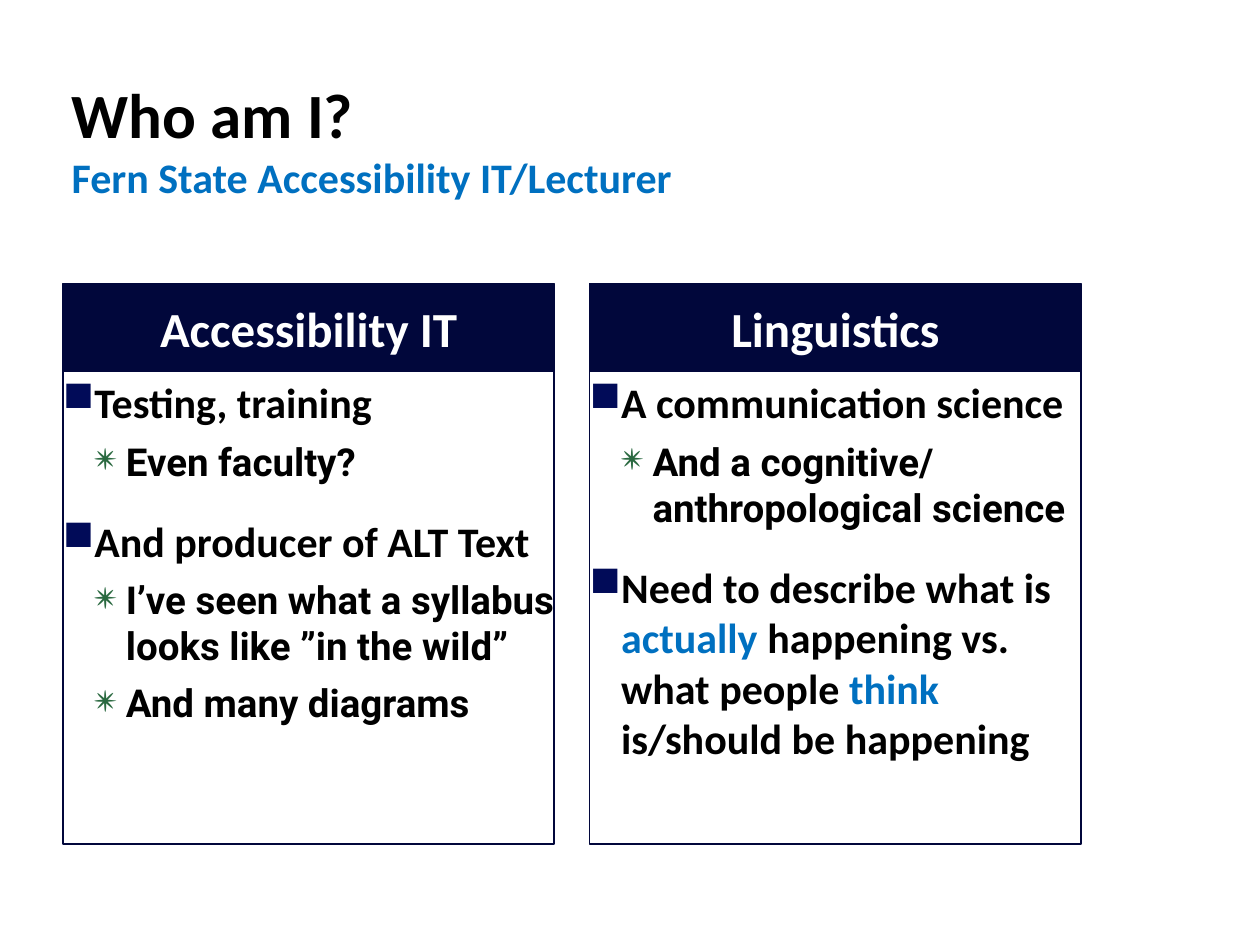
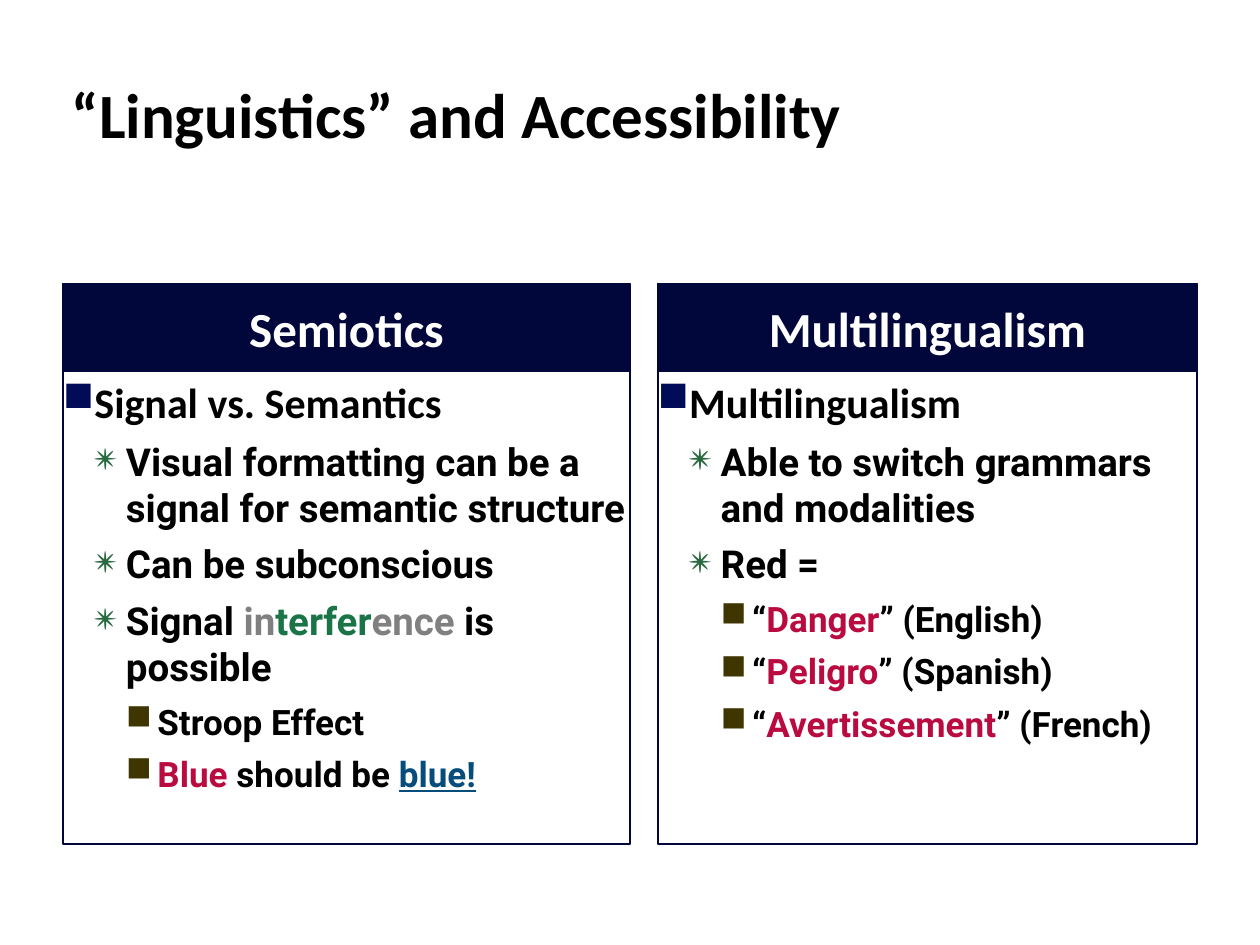
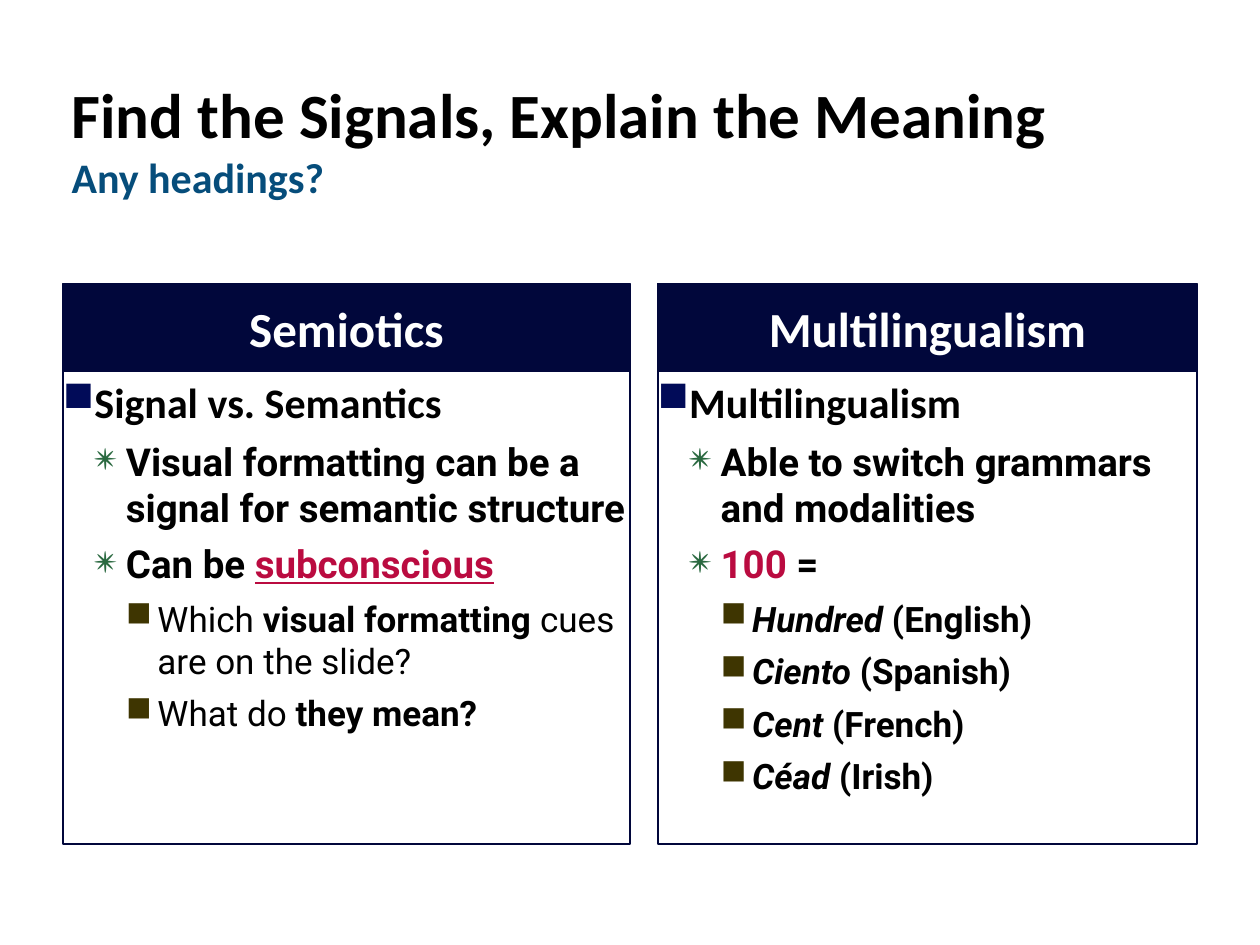
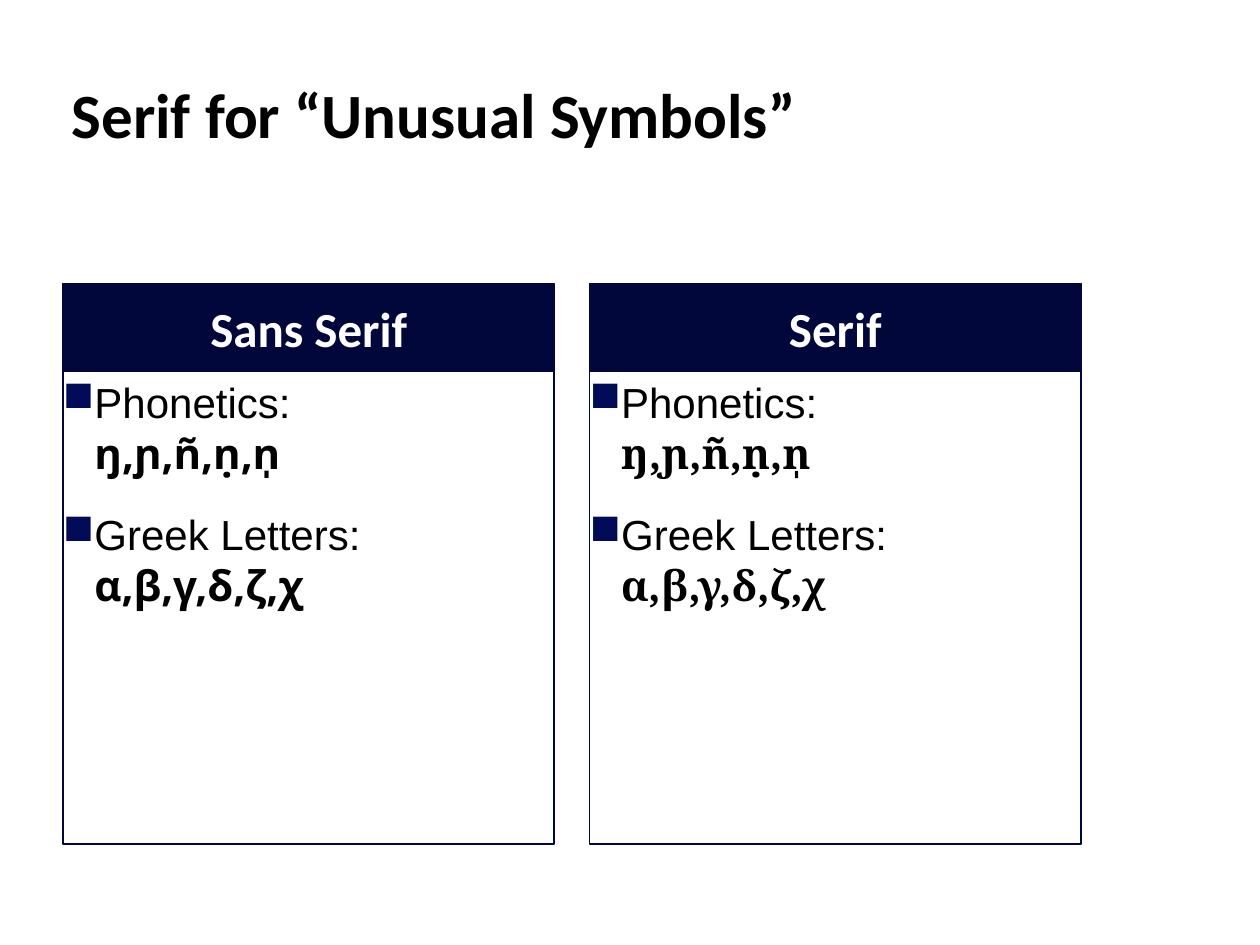
from dataclasses import dataclass
from typing import NamedTuple

from lxml import etree
from pptx import Presentation
from pptx import util as u
from pptx.dml.color import RGBColor
from pptx.enum import shapes, text
from pptx.oxml import ns

COLORS = {
    "black": "000000",
    "white": "FFFFFF",
    "navy": "01073B",
    "sky": "0070C0",
    "blue": "064D7B",
    "red": "BA0B40",
    "gray": "808080",
    "green": "1A7447",
    "bullet_navy": "010B58",
    "bullet_green": "2A6940",
    "bullet_olive": "3E3501",
}
HEADING_FONT = "Calibri"
HEADER_TOP, HEADER_HEIGHT = 2.25, 0.7
BODY_TOP, BODY_HEIGHT = 2.94, 3.76
INDENT = 0.25


class Level(NamedTuple):
    size: int
    font: str
    space_before: int
    bullet: str
    bullet_color: str


LEVELS = (
    Level(24, HEADING_FONT, 18, "■", "bullet_navy"),
    Level(22, "Roboto", 6, "✴", "bullet_green"),
    Level(20, "Roboto", 6, "■", "bullet_olive"),
)


class Span(NamedTuple):
    text: str
    style: dict = {}


class Item(NamedTuple):
    level: int
    spans: tuple


class Column(NamedTuple):
    left: float
    width: float
    header_line: float


EQUAL_COLUMNS = (Column(0.5, 3.9, 1), Column(4.68, 3.9, 0.75))
WIDE_COLUMNS = (Column(0.5, 4.5, 1), Column(5.22, 4.28, 0.75))


@dataclass
class Panel:
    header: str
    items: list


@dataclass
class Page:
    title: str
    panels: tuple
    columns: tuple
    subtitle: str = ""
    subtitle_color: str = "blue"


def item(level: int, *parts) -> Item:
    return Item(level, tuple(Span(part) if isinstance(part, str) else part for part in parts))


def tint(words: str, color: str, **style) -> Span:
    return Span(words, {"color": color, **style})


def translation(word: str, language: str) -> Item:
    return item(2, "“", tint(word, "red"), f"” ({language})")


def number_word(word: str, language: str) -> Item:
    return item(2, Span(word, {"italic": True}), f" ({language})")


def symbol_panel(header: str, font: str) -> Panel:
    samples = (("Phonetics: ", "ŋ,ɲ,ñ,ṇ,n̩"), ("Greek Letters: ", "α,β,γ,δ,ζ,χ"))
    return Panel(header, [
        item(0, Span(f"{label}\n", {"font": "Arial", "bold": False}), Span(symbols, {"font": font}))
        for label, symbols in samples
    ])


SIGNAL_ITEMS = [
    item(0, "Signal vs. Semantics"),
    item(1, "Visual formatting can be a signal for semantic structure"),
]
LANGUAGE_ITEMS = [
    item(0, "Multilingualism"),
    item(1, "Able to switch grammars and modalities"),
]

PAGES = [
    Page("Who am I?", (
        Panel("Accessibility IT", [
            item(0, "Testing, training"),
            item(1, "Even faculty?"),
            item(0, "And producer of ALT Text"),
            item(1, "I’ve seen what a syllabus looks like ”in the wild”"),
            item(1, "And many diagrams"),
        ]),
        Panel("Linguistics", [
            item(0, "A communication science"),
            item(1, "And a cognitive/\nanthropological science"),
            item(0, "Need to describe what is ", tint("actually", "sky"),
                 " happening vs. what people ", tint("think", "sky"),
                 " is/should be happening"),
        ]),
    ), EQUAL_COLUMNS, "Fern State Accessibility IT/Lecturer", "sky"),
    Page("“Linguistics” and Accessibility", (
        Panel("Semiotics", SIGNAL_ITEMS + [
            item(1, "Can be subconscious"),
            item(1, "Signal ", tint("in", "gray"), tint("terfer", "green"),
                 tint("ence", "gray"), " is possible"),
            item(2, "Stroop Effect"),
            item(2, tint("Blue", "red"), " should be ", tint("blue!", "blue", underline=True)),
        ]),
        Panel("Multilingualism", LANGUAGE_ITEMS + [
            item(1, "Red ="),
            translation("Danger", "English"),
            translation("Peligro", "Spanish"),
            translation("Avertissement", "French"),
        ]),
    ), WIDE_COLUMNS),
    Page("Find the Signals, Explain the Meaning", (
        Panel("Semiotics", SIGNAL_ITEMS + [
            item(1, "Can be ", tint("subconscious", "red", underline=True)),
            item(2, Span("Which ", {"bold": False}), "visual formatting ",
                 Span("cues are on the slide?", {"bold": False})),
            item(2, Span("What do ", {"bold": False}), "they mean?"),
        ]),
        Panel("Multilingualism", LANGUAGE_ITEMS + [
            item(1, tint("100", "red"), " ="),
            number_word("Hundred", "English"),
            number_word("Ciento", "Spanish"),
            number_word("Cent", "French"),
            number_word("Céad", "Irish"),
        ]),
    ), WIDE_COLUMNS, "Any headings?"),
    Page("Serif for “Unusual Symbols”", (
        symbol_panel("Sans Serif", "Noto Sans"),
        symbol_panel("Serif", "Noto Serif"),
    ), EQUAL_COLUMNS),
]


def rgb(color: str) -> RGBColor:
    return RGBColor.from_string(COLORS[color])


def add_text(paragraph, words: str, *, size: int, font: str = HEADING_FONT,
             color: str = "black", bold: bool = True, italic: bool = False,
             underline: bool = False) -> None:
    for index, line in enumerate(words.split("\n")):
        if index:
            paragraph.add_line_break()
        if line:
            run = paragraph.add_run()
            run.text = line
            run.font.size = u.Pt(size)
            run.font.name = font
            run.font.color.rgb = rgb(color)
            run.font.bold = bold
            run.font.italic = italic
            run.font.underline = underline


def set_bullet(paragraph, depth: int) -> None:
    level = LEVELS[depth]
    paragraph.level = depth
    paragraph.alignment = text.PP_ALIGN.LEFT
    paragraph.space_before = u.Pt(level.space_before)
    properties = paragraph._p.get_or_add_pPr()
    properties.set("marL", str(u.Inches(INDENT * (depth + 1))))
    properties.set("indent", str(u.Inches(-INDENT)))
    bullet_color = etree.SubElement(properties, ns.qn("a:buClr"))
    etree.SubElement(bullet_color, ns.qn("a:srgbClr"), val=COLORS[level.bullet_color])
    etree.SubElement(properties, ns.qn("a:buChar"), char=level.bullet)


def add_box(slide, column: Column, top: float, height: float, line: float,
            inset: float = 0):
    box = slide.shapes.add_shape(
        shapes.MSO_SHAPE.RECTANGLE, u.Inches(column.left), u.Inches(top),
        u.Inches(column.width), u.Inches(height))
    box.shadow.inherit = False
    box.line.color.rgb = rgb("navy")
    box.line.width = u.Pt(line)
    frame = box.text_frame
    frame.word_wrap = True
    frame.margin_left = frame.margin_right = frame.margin_bottom = 0
    frame.margin_top = u.Inches(inset)
    return box


def add_title(slide, page: Page) -> None:
    frame = slide.shapes.add_textbox(
        u.Inches(0.47), u.Inches(0.55), u.Inches(8.25), u.Inches(1.34)).text_frame
    frame.word_wrap = True
    paragraph = frame.paragraphs[0]
    add_text(paragraph, page.title, size=36)
    if page.subtitle:
        paragraph.add_line_break()
        add_text(paragraph, page.subtitle, size=24, color=page.subtitle_color)


def add_panel(slide, panel: Panel, column: Column) -> None:
    header = add_box(slide, column, HEADER_TOP, HEADER_HEIGHT, column.header_line)
    header.fill.solid()
    header.fill.fore_color.rgb = rgb("navy")
    header.text_frame.vertical_anchor = text.MSO_ANCHOR.MIDDLE
    heading = header.text_frame.paragraphs[0]
    heading.alignment = text.PP_ALIGN.CENTER
    add_text(heading, panel.header, size=28, color="white")

    body = add_box(slide, column, BODY_TOP, BODY_HEIGHT, 1, inset=0.05)
    body.fill.background()
    frame = body.text_frame
    frame.vertical_anchor = text.MSO_ANCHOR.TOP
    for index, entry in enumerate(panel.items):
        paragraph = frame.add_paragraph() if index else frame.paragraphs[0]
        set_bullet(paragraph, entry.level)
        level = LEVELS[entry.level]
        for span in entry.spans:
            add_text(paragraph, span.text, **{"size": level.size, "font": level.font, **span.style})


def main() -> None:
    deck = Presentation()
    deck.slide_width, deck.slide_height = u.Inches(10), u.Inches(7.5)
    for page in PAGES:
        slide = deck.slides.add_slide(deck.slide_layouts[6])
        add_title(slide, page)
        for panel, column in zip(page.panels, page.columns):
            add_panel(slide, panel, column)
    deck.save("out.pptx")


if __name__ == "__main__":
    main()
